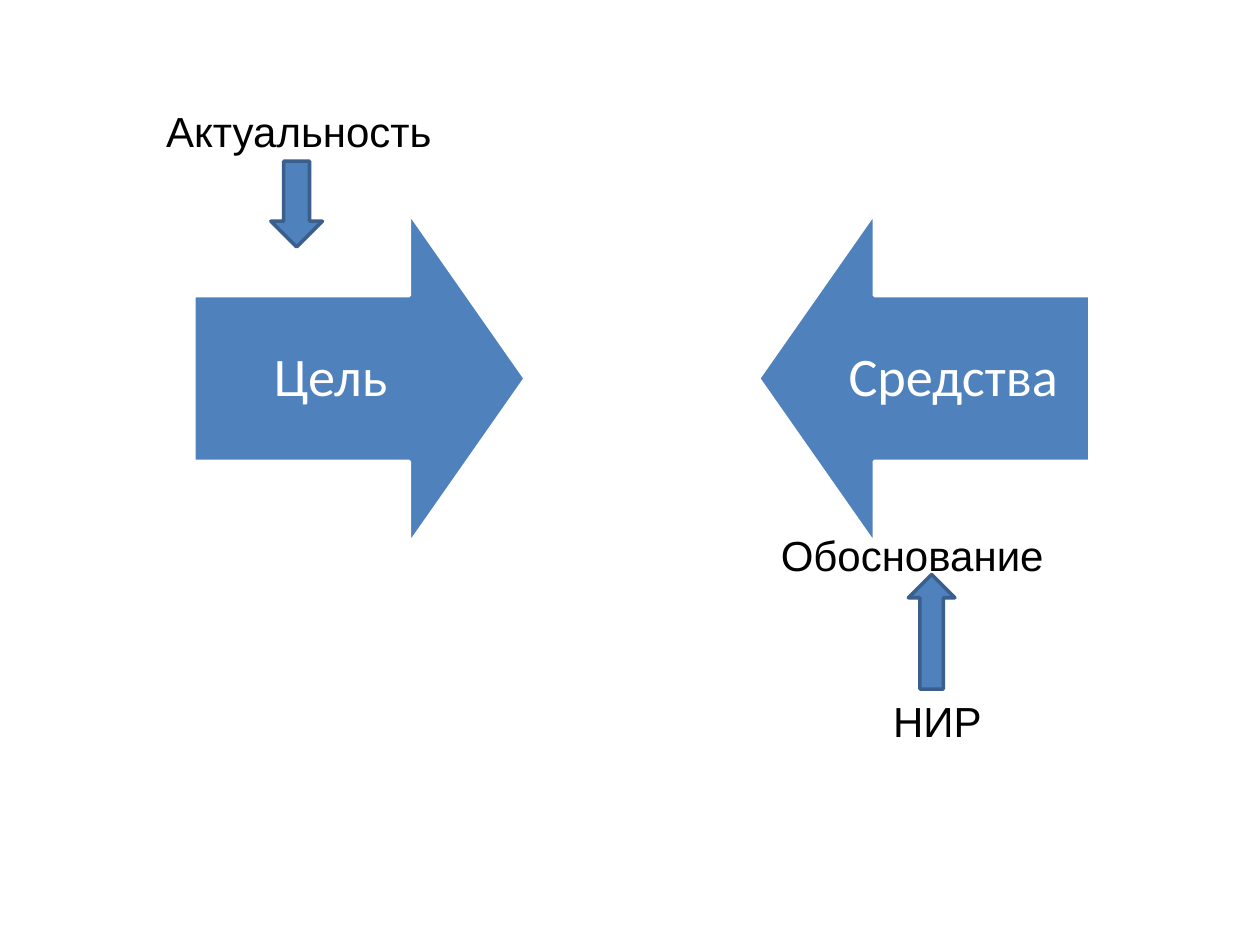
from pptx import Presentation
from pptx.dml.color import RGBColor
from pptx.enum.shapes import MSO_SHAPE as Shape
from pptx.enum.text import MSO_ANCHOR as Anchor, PP_ALIGN as Align
from pptx.util import Cm, Pt

BLUE, DARK_BLUE = "4F81BD", "3A5F8C"
WHITE, BLACK = "FFFFFF", "000000"


def color(hex_string):
    return RGBColor.from_string(hex_string)


def add_arrow(page, box, outline, rotation=0, head=0.5):
    """Draw a down arrow in box (left, top, width, height in cm), then turn it."""
    arrow = page.shapes.add_shape(Shape.DOWN_ARROW, *map(Cm, box))
    arrow.shadow.inherit = False
    arrow.rotation = rotation
    arrow.adjustments[0] = 0.5
    arrow.adjustments[1] = head
    arrow.fill.solid()
    arrow.fill.fore_color.rgb = color(BLUE)
    arrow.line.color.rgb = color(outline)
    arrow.line.width = Pt(2)


def add_text(page, box, words, size=24, font="Arial", ink=BLACK, align=Align.LEFT):
    frame = page.shapes.add_textbox(*map(Cm, box)).text_frame
    frame.word_wrap = True
    para = frame.paragraphs[0]
    para.alignment = align
    span = para.add_run()
    span.text = words
    span.font.size = Pt(size)
    span.font.name = font
    span.font.color.rgb = color(ink)
    return frame


def add_block_arrow(page, box, words, rotation, text_shift):
    """Draw a large sideways arrow with its caption, which covers the tail."""
    left, top, width, height = box
    add_arrow(page, box, WHITE, rotation, head=0.35)
    caption = (left + text_shift, top + height / 4, width - 1.17, height / 2)
    frame = add_text(page, caption, words, 31, "Calibri", WHITE, Align.CENTER)
    frame.vertical_anchor = Anchor.MIDDLE
    frame.margin_left = frame.margin_right = Cm(0.6)
    frame.margin_top = frame.margin_bottom = Cm(0.6)
    frame.paragraphs[0].line_spacing = 0.9


def add_relevance(page, left, top):
    add_text(page, (left, top, 6.6, 1.3), "Актуальность")
    add_arrow(page, (left + 2.36, top + 1.24, 1.04, 1.73), DARK_BLUE)


def add_justification(page, left, top):
    width, height = 6.81, 1.3
    add_text(page, (left, top, width, height), "Обоснование")
    add_text(page, (left, top + 3.35, width, height), "НИР", align=Align.CENTER)
    add_arrow(page, (left + 2.82, top + 1.04, 0.94, 2.31), DARK_BLUE, rotation=180)


def main():
    deck = Presentation()
    deck.slide_width, deck.slide_height = Cm(25.4), Cm(19.05)
    page = deck.slides.add_slide(deck.slide_layouts[6])
    top, side = 4.29, 6.68
    add_block_arrow(page, (3.91, top, side, side), "Цель", 270, 0)
    add_block_arrow(page, (15.29, top, side, side), "Средства", 90, 1.17)
    add_relevance(page, 3.1, 2.01)
    add_justification(page, 15.49, 10.54)
    deck.save("out.pptx")


if __name__ == "__main__":
    main()
